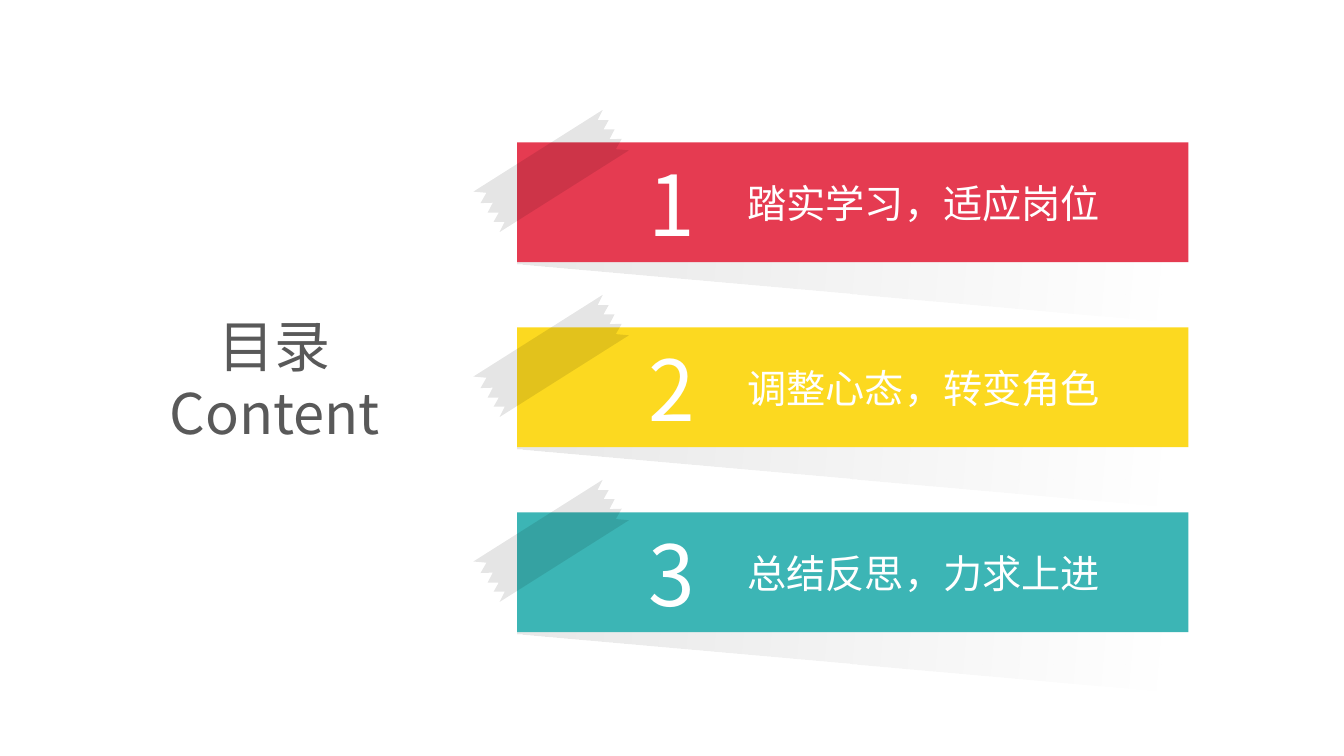
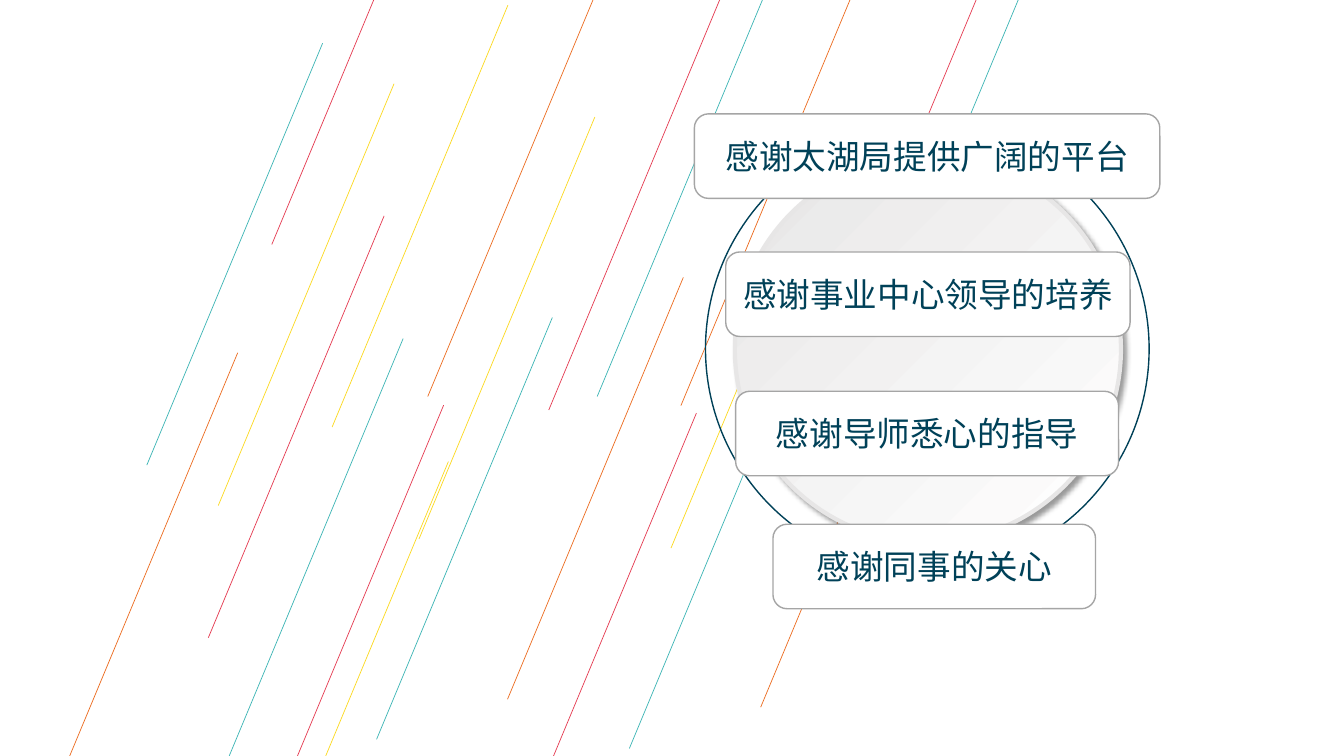
"""Build a contents slide and a closing thank-you slide."""
from lxml.etree import SubElement
from pptx import Presentation
from pptx.dml.color import RGBColor
from pptx.enum.shapes import MSO_CONNECTOR, MSO_SHAPE
from pptx.enum.text import MSO_ANCHOR, MSO_AUTO_SIZE, PP_ALIGN
from pptx.oxml.ns import qn
from pptx.util import Cm, Pt

RED, YELLOW, TEAL, ORANGE = "E53B51", "FCD920", "3CB5B5", "EC6C20"
WHITE, BLACK, GREY, NAVY = "FFFFFF", "000000", "595959", "004158"
SILVER, BORDER = "E7E6E6", "A5A5A5"
HEADING_FONT, BODY_FONT = "Noto Sans CJK JP", "Noto Sans CJK SC"


def write(frame, text, size=24, color=WHITE, font=HEADING_FONT,
          align=PP_ALIGN.LEFT, spacing=None, wrap=True):
    frame.word_wrap = wrap
    frame.auto_size = MSO_AUTO_SIZE.NONE
    frame.vertical_anchor = MSO_ANCHOR.MIDDLE
    for index, line in enumerate(text.split("\n")):
        paragraph = frame.add_paragraph() if index else frame.paragraphs[0]
        paragraph.alignment = align
        paragraph.line_spacing = spacing
        run = paragraph.add_run()
        run.text = line
        run.font.size = Pt(size)
        run.font.color.rgb = RGBColor.from_string(color)
        run.font.name = font
        SubElement(run._r.get_or_add_rPr(), qn("a:ea"), typeface=font)


def paint(shape, colors=(), alphas=(), angle=0, line=None, width=1):
    shape.shadow.inherit = False
    if len(colors) == 2:
        shape.fill.gradient()
        shape.fill.gradient_angle = angle
        for stop, color in zip(shape.fill.gradient_stops, colors):
            stop.color.rgb = RGBColor.from_string(color)
    elif colors:
        shape.fill.solid()
        shape.fill.fore_color.rgb = RGBColor.from_string(colors[0])
    else:
        shape.fill.background()
    fill_colors = list(shape._element.spPr.iter(qn("a:srgbClr")))
    for fill_color, alpha in zip(fill_colors, alphas):
        SubElement(fill_color, qn("a:alpha"), val=str(alpha * 1000))
    if line:
        shape.line.color.rgb = RGBColor.from_string(line)
        shape.line.width = Pt(width)
    else:
        shape.line.fill.background()


deck = Presentation()
deck.slide_width, deck.slide_height = Cm(33.87), Cm(19.05)

contents = deck.slides.add_slide(deck.slide_layouts[5])
title = contents.shapes.title
title.left, title.top, title.width, title.height = Cm(3.25), Cm(7.7), Cm(7.34), Cm(3.68)
write(title.text_frame, "目录\nContent", size=40, color=GREY,
      align=PP_ALIGN.CENTER, spacing=Pt(48))

CHAPTERS = [("踏实学习，适应岗位", RED), ("调整心态，转变角色", YELLOW), ("总结反思，力求上进", TEAL)]
BANNER_LEFT, BANNER_TOP, BANNER_STEP = 13.03, 3.59, 4.66
BANNER_SIZE = Cm(16.92), Cm(3.02)
HALF_TAPE = [(-1.96, 0.52), (1.3, -1.54), (1.17, -1.28), (1.45, -1.28), (1.32, -1.05),
             (1.6, -1.05), (1.47, -0.8), (1.78, -0.81), (1.63, -0.55)]
TAPE = HALF_TAPE + [(-x, -y) for x, y in HALF_TAPE]

for index, (chapter, color) in enumerate(CHAPTERS):
    top = BANNER_TOP + index * BANNER_STEP
    cast = contents.shapes.add_shape(
        MSO_SHAPE.RECTANGLE, Cm(BANNER_LEFT + 0.1), Cm(top + 0.81), *BANNER_SIZE)
    cast.rotation = 5.1
    paint(cast, [BLACK, BLACK], alphas=[10, 0])
    banner = contents.shapes.add_shape(
        MSO_SHAPE.RECTANGLE, Cm(BANNER_LEFT), Cm(top), *BANNER_SIZE)
    paint(banner, [color])

    corners = [(Cm(13.89 + x), Cm(top + 0.72 + y)) for x, y in TAPE]
    outline = contents.shapes.build_freeform(*corners[0])
    outline.add_line_segments(corners[1:])
    paint(outline.convert_to_shape(), [BLACK], alphas=[10])

    number = contents.shapes.add_textbox(Cm(16.1), Cm(top + 0.12), Cm(1.7), Cm(2.82))
    write(number.text_frame, str(index + 1), size=60, wrap=False)
    label = contents.shapes.add_textbox(Cm(18.59), Cm(top + 0.8), Cm(10.59), Cm(1.45))
    write(label.text_frame, chapter, size=28, font=BODY_FONT)

thanks = deck.slides.add_slide(deck.slide_layouts[6])

RAIN_RUN, RAIN_FALL = -4.43, 10.63
RAIN = {
    ORANGE: [(21.59, -0.41), (23.6, 7.19), (15.21, -0.64), (5.99, 8.89), (17.22, 6.99)],
    YELLOW: [(21.34, 3.18), (12.8, 0.13), (14.99, 2.95), (9.93, 2.11), (11.3, 11.63)],
    TEAL: [(20.29, 8.23), (25.83, -0.41), (10.16, 8.53), (13.92, 8), (8.13, 1.09),
           (19.48, -0.64)],
    RED: [(24.64, -0.1), (17.55, 10.41), (9.68, 5.44), (18.26, -0.3), (11.28, -4.47),
          (11.18, 10.21)],
}
for color, starts in RAIN.items():
    for x, y in starts:
        streak = thanks.shapes.add_connector(
            MSO_CONNECTOR.STRAIGHT, Cm(x), Cm(y), Cm(x + RAIN_RUN), Cm(y + RAIN_FALL))
        streak.line.color.rgb = RGBColor.from_string(color)
        streak.line.width = Pt(0.5)
        SubElement(streak._element.spPr, qn("a:effectLst"))

ring = thanks.shapes.add_shape(MSO_SHAPE.OVAL, Cm(17.78), Cm(3.2), Cm(11.18), Cm(11.18))
paint(ring, line=NAVY)
disc = thanks.shapes.add_shape(MSO_SHAPE.OVAL, Cm(18.52), Cm(3.94), Cm(9.73), Cm(9.73))
paint(disc, [WHITE, SILVER], angle=135, line=SILVER, width=3)
glow = SubElement(disc._element.spPr.find(qn("a:effectLst")), qn("a:outerShdw"),
                  blurRad=str(Pt(4)), dist=str(Pt(3)), dir=str(45 * 60000),
                  algn="tl", rotWithShape="0")
glow_color = SubElement(glow, qn("a:srgbClr"), val=BLACK)
SubElement(glow_color, qn("a:alpha"), val="40000")

GRATITUDE = [
    ("感谢太湖局提供广阔的平台", 17.5, 2.87, 11.73),
    ("感谢事业中心领导的培养", 18.29, 6.35, 10.19),
    ("感谢导师悉心的指导", 18.54, 9.86, 9.65),
    ("感谢同事的关心", 19.48, 13.21, 8.13),
]
for words, left, top, width in GRATITUDE:
    card = thanks.shapes.add_shape(
        MSO_SHAPE.ROUNDED_RECTANGLE, Cm(left), Cm(top), Cm(width), Cm(2.13))
    paint(card, [WHITE], line=BORDER)
    write(card.text_frame, words, color=NAVY, align=PP_ALIGN.CENTER)

deck.save("out.pptx")
